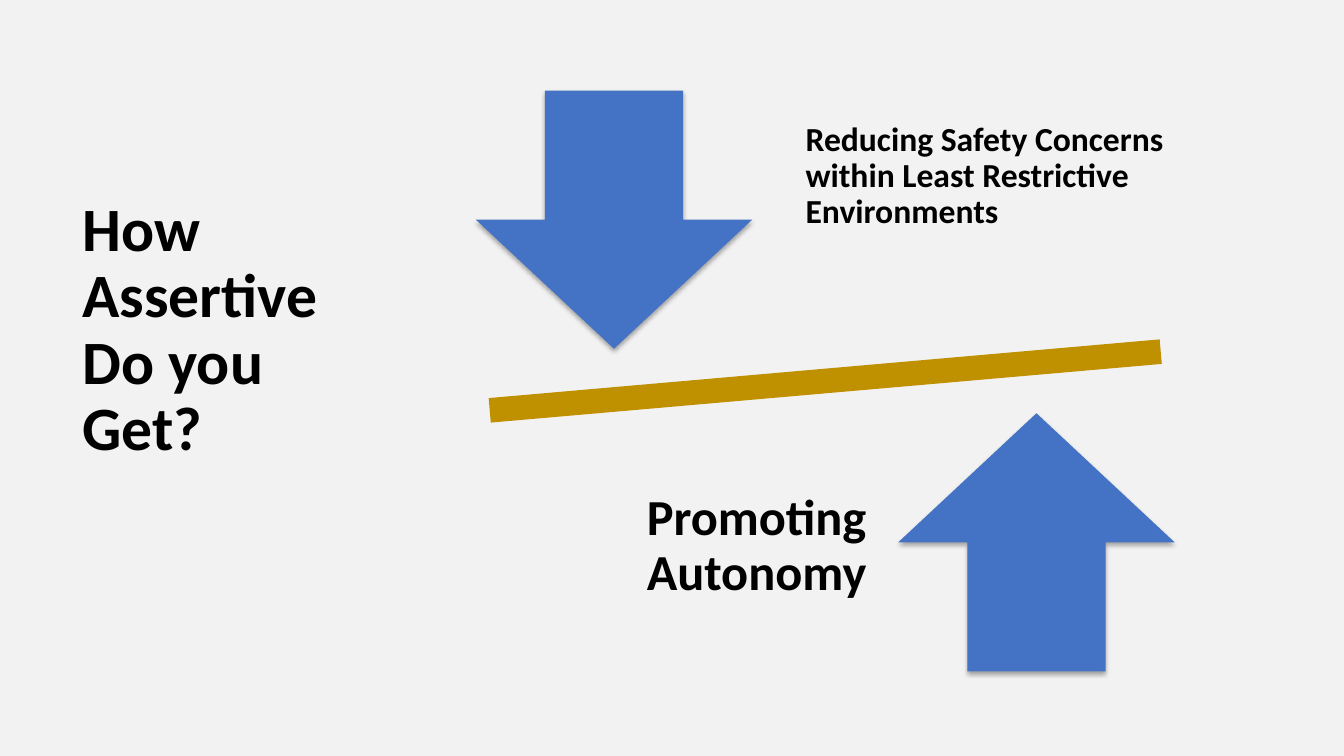
import pptx
import pptx.dml.color
import pptx.enum.shapes
import pptx.enum.text
import pptx.oxml
import pptx.oxml.ns
import pptx.util
from dataclasses import dataclass

Inches = pptx.util.Inches
Pt = pptx.util.Pt
Shapes = pptx.enum.shapes.MSO_SHAPE
Align = pptx.enum.text.PP_ALIGN


@dataclass(frozen=True)
class Theme:
    font: str = "Calibri"
    background: str = "F2F2F2"
    text: str = "000000"
    arrow: str = "4472C4"
    beam: str = "BF9000"
    title_size: int = 44
    upper_size: int = 24
    lower_size: int = 36


THEME = Theme()


@dataclass(frozen=True)
class Box:
    left: float
    top: float
    width: float
    height: float

    def inner(self, left, top, width, height):
        """Return a box placed relative to this one's corner."""
        return Box(self.left + left, self.top + top, width, height)

    def lengths(self):
        return [Inches(v) for v in (self.left, self.top, self.width, self.height)]


def color(value):
    return pptx.dml.color.RGBColor.from_string(value)


def add_text(slide, box, text, *, size, margin=None, align=Align.LEFT):
    frame = slide.shapes.add_textbox(*box.lengths()).text_frame
    frame.word_wrap = True
    frame.vertical_anchor = pptx.enum.text.MSO_ANCHOR.MIDDLE
    if margin is not None:
        frame.margin_left = frame.margin_right = Inches(margin)
        frame.margin_top = frame.margin_bottom = Inches(margin)
    paragraph = frame.paragraphs[0]
    paragraph.alignment = align
    paragraph.line_spacing = 0.9
    run = paragraph.add_run()
    run.text = text
    run.font.name = THEME.font
    run.font.size = Pt(size)
    run.font.bold = True
    run.font.color.rgb = color(THEME.text)


def add_solid(slide, preset, box, fill):
    shape = slide.shapes.add_shape(preset, *box.lengths())
    shape.shadow.inherit = False
    shape.fill.solid()
    shape.fill.fore_color.rgb = color(fill)
    shape.line.fill.background()
    return shape


def add_arrow(slide, preset, box):
    shape = add_solid(slide, preset, box, THEME.arrow)
    # Soft shadow falling straight down
    effects = shape._element.spPr.find(pptx.oxml.ns.qn("a:effectLst"))
    effects.append(pptx.oxml.parse_xml(
        f'<a:outerShdw {pptx.oxml.ns.nsdecls("a")} blurRad="{Pt(3.5)}" '
        f'dist="{Pt(2.2)}" dir="5400000" rotWithShape="0">'
        '<a:srgbClr val="000000"><a:alpha val="32000"/></a:srgbClr></a:outerShdw>'))


def add_title(slide, box):
    add_text(slide, box, "How Assertive Do you Get?", size=THEME.title_size)


def add_balance(slide, box):
    # Tilted beam, centred on the region
    beam_height = 1.04
    beam = add_solid(
        slide, Shapes.MATH_MINUS,
        box.inner(0, (box.height - beam_height) / 2, box.width, beam_height),
        THEME.beam)
    beam.rotation = 355

    # Opposing arrows, mirrored about the region's centre
    width, height, inset = 2.74, 2.56, 1.08
    add_arrow(slide, Shapes.DOWN_ARROW, box.inner(inset, 0, width, height))
    add_arrow(slide, Shapes.UP_ARROW, box.inner(
        box.width - inset - width, box.height - height, width, height))

    # Label beside each arrow
    add_text(slide, box.inner(4.16, 0.07, 4.82, 1.56),
             "Reducing Safety Concerns within Least Restrictive Environments",
             size=THEME.upper_size, margin=0.19)
    add_text(slide, box.inner(2.4, 3.96, 2.93, 1.13), "Promoting Autonomy",
             size=THEME.lower_size, margin=0.28, align=Align.CENTER)


def main():
    presentation = pptx.Presentation()
    presentation.slide_width = Inches(13.33)
    presentation.slide_height = Inches(7.5)
    slide = presentation.slides.add_slide(presentation.slide_layouts[6])
    slide.background.fill.solid()
    slide.background.fill.fore_color.rgb = color(THEME.background)
    add_title(slide, Box(0.72, 1.14, 2.61, 4.29))
    add_balance(slide, Box(3.64, 0.9, 9.09, 5.76))
    presentation.save("out.pptx")


if __name__ == "__main__":
    main()
